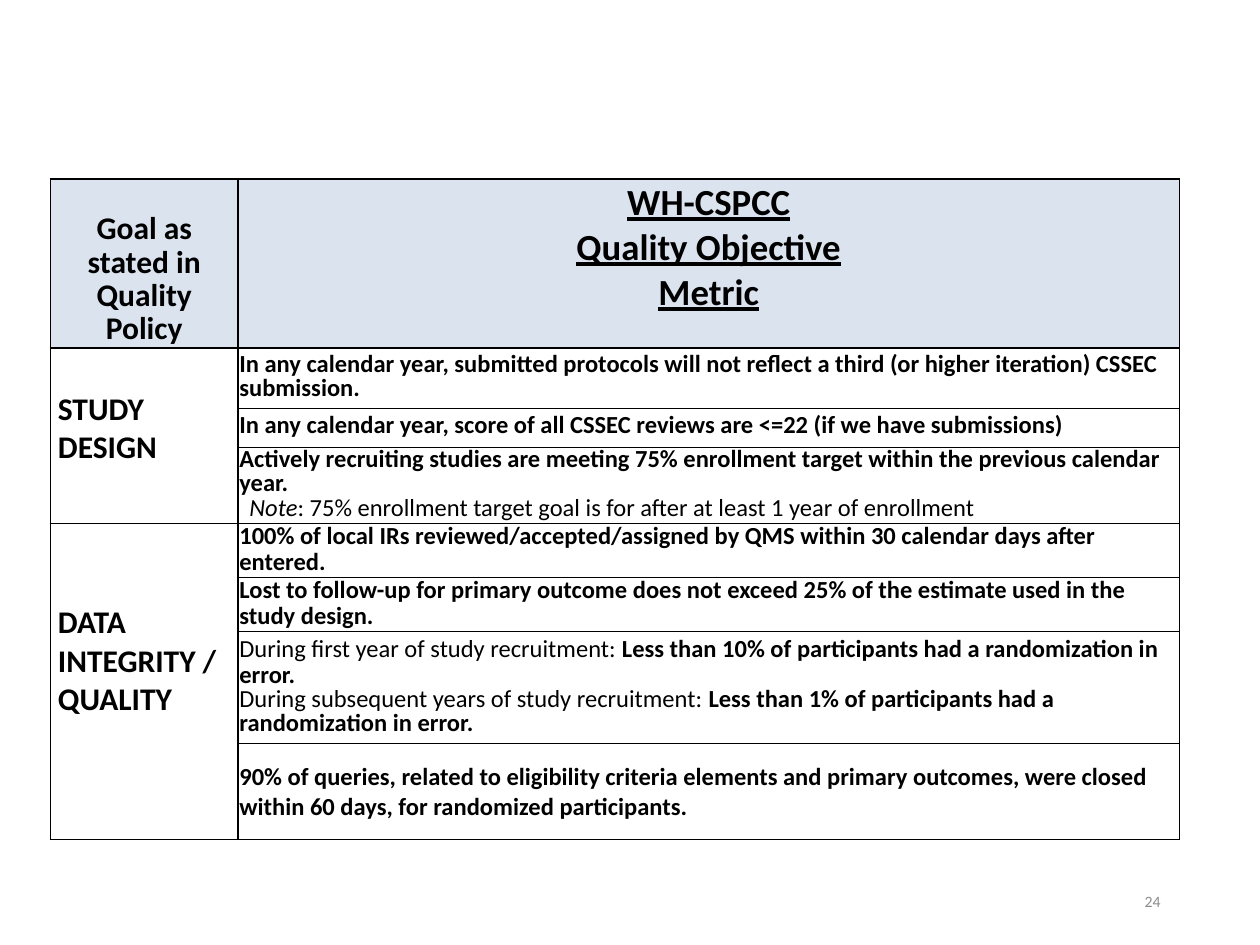
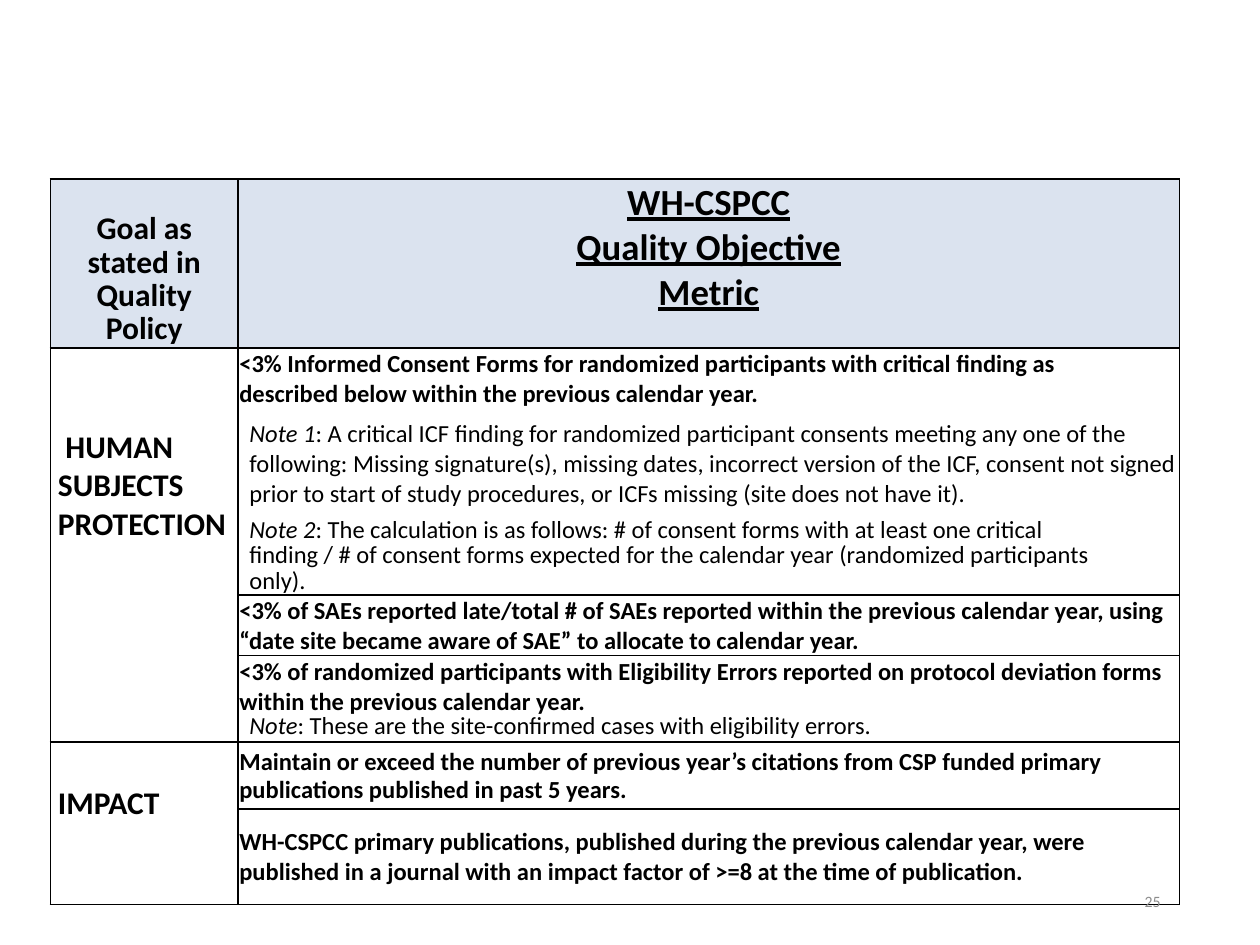
"""Builds two slides that list quality goals and their metrics."""
import lxml.etree
import pptx
import pptx.dml.color
import pptx.enum.text
import pptx.oxml.ns
import pptx.util

INK, BAND, GREY = "000000", "DBE3EF", "8C8C8C"
FONT = "Calibri"
LEFT, TOP, COLS, HEAD = 0.4, 1.42, (1.49, 7.47), 1.33
LINE = 18 * 1.22 / 72
NOTE = {"left": 0.08}
NARROW = 0.63

HEADS = [
    ([{"runs": [("Goal as stated in", "b")], "line": 19.4},
      {"runs": [("Quality Policy", "b")], "line": 18.8}],
     {"size": 18, "left": 0.07, "right": 0.07}, 0.28),
    ([{"runs": [("WH-CSPCC Quality Objective Metric", "bu")]}],
     {"size": 21, "left": 2.63, "right": 2.63}, 0.01),
]


def bold(text, **form):
    """Return one bold paragraph."""
    return {"runs": [(text, "b")], **form}


def note(name, text, **form):
    """Return an indented note with its name in italics."""
    return {"runs": [(name, "i"), (text, "")], **NOTE, **form}


SLIDES = [
    ("24", [
        ("STUDY DESIGN", 1, 0, [
            (0.48, [bold("In any calendar year, submitted protocols will not reflect a third "
                         "(or higher iteration) CSSEC submission.", line=13.7)]),
            (0.31, [bold("In any calendar year, score of all CSSEC reviews are <=22 "
                         "(if we have submissions)", line=13.6)]),
            (0.6, [bold("Actively recruiting studies are meeting 75% enrollment target within "
                        "the previous calendar year.", line=14.2),
                   note("Note", ": 75% enrollment target goal is for after at least 1 year "
                        "of enrollment", line=14.2)]),
        ]),
        ("DATA INTEGRITY / QUALITY", 2, 0, [
            (0.43, [bold("100% of local IRs reviewed/accepted/assigned by QMS within 30 "
                         "calendar days after entered.", line=14.6)]),
            (0.43, [bold("Lost to follow-up for primary outcome does not exceed 25% of the "
                         "estimate used in the study design.", line=14.6)]),
            (0.89, [{"runs": [("During first year of study recruitment: ", ""),
                              ("Less than 10% of participants had a randomization in error.",
                               "b")], "line": 14.6},
                    {"runs": [("During subsequent years of study recruitment: ", ""),
                              ("Less than 1% of participants had a randomization in error.",
                               "b")], "line": 13.7}]),
            (0.76, [bold("90% of queries, related to eligibility criteria elements and primary "
                         "outcomes, were closed within 60 days, for randomized participants.")]),
        ]),
    ]),
    ("25", [
        ("HUMAN SUBJECTS PROTECTION", 2, 0.06, [
            (1.96, [bold("<3% Informed Consent Forms for randomized participants with critical "
                         "finding as described below within the previous calendar year.",
                         right=NARROW),
                    note("Note 1", ": A critical ICF finding for randomized participant consents "
                         "meeting any one of the following: Missing signature(s), missing dates, "
                         "incorrect version of the ICF, consent not signed prior to start of "
                         "study procedures, or ICFs missing (site does not have it).", before=6),
                    note("Note 2", ": The calculation is as follows: # of consent forms with at "
                         "least one critical finding / # of consent forms expected for the "
                         "calendar year (randomized participants only).",
                         line=14.5, before=6.1, right=NARROW)]),
            (0.48, [bold("<3% of SAEs reported late/total # of SAEs reported within the previous "
                         "calendar year, using “date site became aware of SAE” to allocate to "
                         "calendar year.")]),
            (0.69, [bold("<3% of randomized participants with Eligibility Errors reported on "
                         "protocol deviation forms within the previous calendar year."),
                    note("Note", ": These are the site-confirmed cases with eligibility errors.",
                         line=13.7)]),
        ]),
        ("IMPACT", 1, 0, [
            (0.53, [bold("Maintain or exceed the number of previous year’s citations from CSP "
                         "funded primary publications published in past 5 years.", ratio=0.93)]),
            (0.76, [bold("WH-CSPCC primary publications, published during the previous calendar "
                         "year, were published in a journal with an impact factor of >=8 at the "
                         "time of publication.")]),
        ]),
    ]),
]


def inch(size):
    """Return a length in inches."""
    return pptx.util.Inches(size)


def tint(code):
    """Return a colour from its hex code."""
    return pptx.dml.color.RGBColor.from_string(code)


def write(frame, paras, size=14, color=INK, align="LEFT", left=0, right=0, first=0):
    """Fill a text frame with formatted paragraphs."""
    frame.word_wrap = True
    for i, item in enumerate(paras):
        para = frame.add_paragraph() if i else frame.paragraphs[0]
        para.alignment = getattr(pptx.enum.text.PP_ALIGN, align)
        para.space_before = pptx.util.Pt(item.get("before", 0))
        if "line" in item:
            para.line_spacing = pptx.util.Pt(item["line"])
        elif "ratio" in item:
            para.line_spacing = item["ratio"]
        props = para._p.get_or_add_pPr()
        props.set("marL", str(inch(item.get("left", left))))
        props.set("marR", str(inch(item.get("right", right))))
        props.set("indent", str(inch(first)))
        for text, style in item["runs"]:
            run = para.add_run()
            run.text = text
            font = run.font
            font.name, font.size = FONT, pptx.util.Pt(size)
            font.bold, font.italic = "b" in style, "i" in style
            font.underline = "u" in style
            font.color.rgb = tint(color)


def frame_cell(cell, fill=None):
    """Give a cell its fill and four thin borders."""
    props = cell._tc.get_or_add_tcPr()
    name = pptx.oxml.ns.qn
    for side in ("a:lnL", "a:lnR", "a:lnT", "a:lnB"):
        edge = lxml.etree.SubElement(props, name(side), w=str(pptx.util.Pt(1)))
        paint = lxml.etree.SubElement(edge, name("a:solidFill"))
        lxml.etree.SubElement(paint, name("a:srgbClr"), val=INK)
    if fill:
        cell.fill.solid()
        cell.fill.fore_color.rgb = tint(fill)
    else:
        cell.fill.background()


def pad(cell, side, top, base):
    """Set the inner margins of a cell."""
    cell.margin_left = cell.margin_right = inch(side)
    cell.margin_top, cell.margin_bottom = inch(top), inch(base)


def draw_table(slide, goals):
    """Draw the header row and one merged block for each goal."""
    highs = [HEAD] + [high for goal in goals for high, _ in goal[3]]
    table = slide.shapes.add_table(len(highs), 2, inch(LEFT), inch(TOP),
                                   inch(sum(COLS)), inch(sum(highs))).table
    table.first_row = table.horz_banding = False
    for col, wide in zip(table.columns, COLS):
        col.width = inch(wide)
    for i, high in enumerate(highs):
        table.rows[i].height = inch(high)
        for j in range(2):
            frame_cell(table.cell(i, j), None if i else BAND)
    for j, (paras, form, top) in enumerate(HEADS):
        cell = table.cell(0, j)
        pad(cell, 0.01, top, 0)
        write(cell.text_frame, paras, align="CENTER", **form)
    row = 1
    for goal, skip, first, items in goals:
        label = table.cell(row, 0)
        label.merge(table.cell(row + len(items) - 1, 0))
        pad(label, 0.06, 0.03 + skip * LINE, 0.03)
        write(label.text_frame, [bold(goal)], size=18, first=first)
        for _, paras in items:
            cell = table.cell(row, 1)
            pad(cell, 0.01, 0.01, 0)
            cell.vertical_anchor = pptx.enum.text.MSO_ANCHOR.MIDDLE
            write(cell.text_frame, paras)
            row += 1


def draw_page(slide, number):
    """Write the page number at the lower right."""
    box = slide.shapes.add_textbox(inch(7.06), inch(6.95), inch(2.25), inch(0.4))
    box.text_frame.vertical_anchor = pptx.enum.text.MSO_ANCHOR.MIDDLE
    write(box.text_frame, [{"runs": [(number, "")]}], size=9, color=GREY, align="RIGHT")


def main():
    """Build and save the deck."""
    deck = pptx.Presentation()
    deck.slide_width, deck.slide_height = inch(10), inch(7.5)
    for number, goals in SLIDES:
        slide = deck.slides.add_slide(deck.slide_layouts[6])
        draw_table(slide, goals)
        draw_page(slide, number)
    deck.save("out.pptx")


if __name__ == "__main__":
    main()
